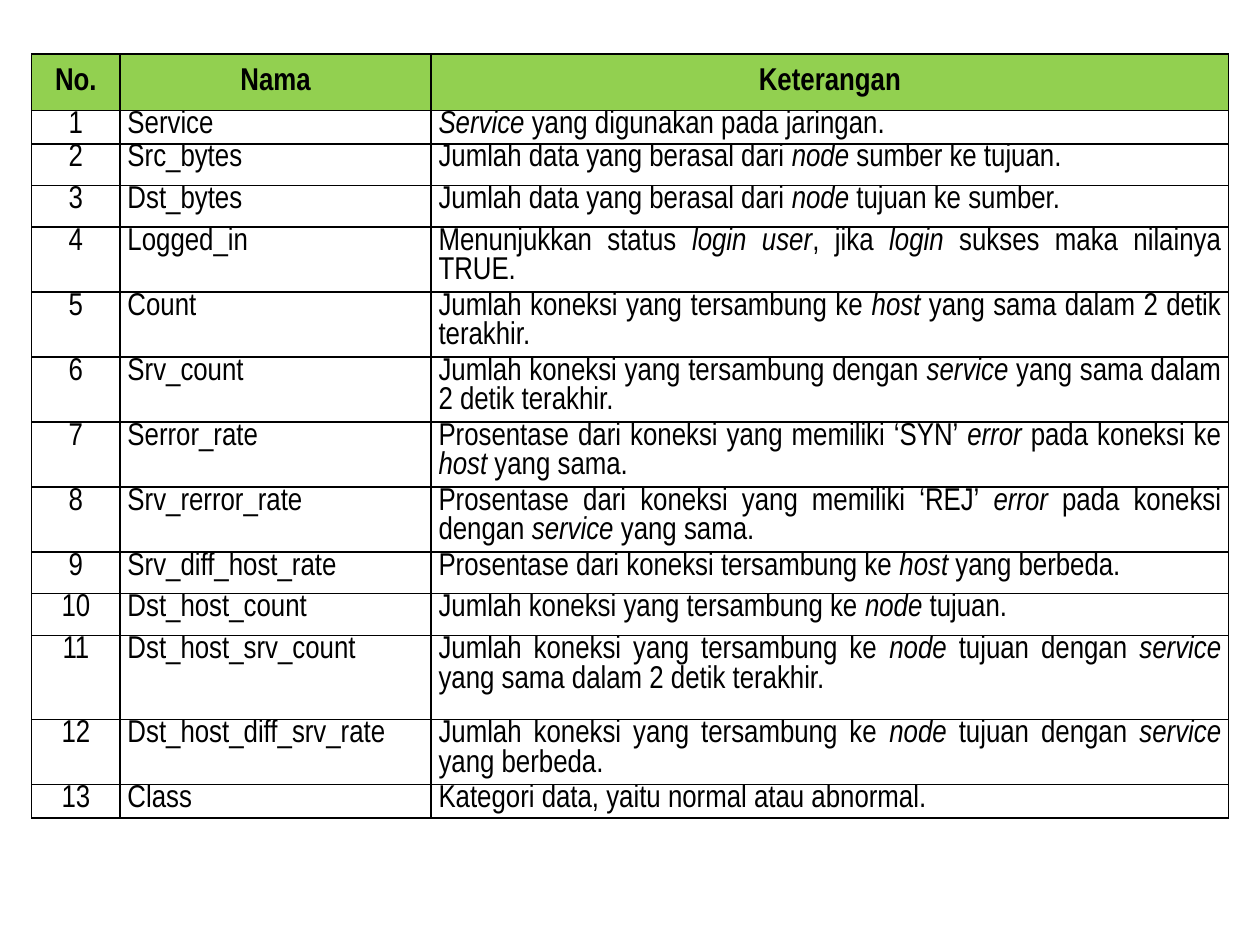
from dataclasses import dataclass
from lxml.etree import SubElement as Sub
from pptx import Presentation
from pptx.dml.color import RGBColor as Rgb
from pptx.enum.text import MSO_ANCHOR as Anchor, PP_ALIGN as Align
from pptx.oxml.ns import qn
from pptx.table import Table, _Cell as Cell
from pptx.util import Cm, Pt

HUES = {"head": "92D050", "ink": "000000"}
FACE = "Arial Narrow"
WIDTHS = (1.78, 6.27, 16.08)
HEAD = ("No.", "Nama", "Keterangan")
HEAD_H = 1.14
ALIGNS = (Align.CENTER, Align.LEFT, Align.JUSTIFY)
LOW, MID, DUO, TALL = 0.67, 0.84, 1.31, 1.7


@dataclass
class Field:
    name: str
    note: str
    high: float


FIELDS = [
    Field("Service", "*Service* yang digunakan pada jaringan.", LOW),
    Field("Src_bytes", "Jumlah data yang berasal dari *node* sumber ke tujuan.", MID),
    Field("Dst_bytes", "Jumlah data yang berasal dari *node* tujuan ke sumber.", MID),
    Field("Logged_in", "Menunjukkan status *login user*, jika *login* sukses maka nilainya TRUE.", DUO),
    Field("Count", "Jumlah koneksi yang tersambung ke *host* yang sama dalam 2 detik terakhir.", DUO),
    Field("Srv_count", "Jumlah koneksi yang tersambung dengan *service* yang sama dalam 2 detik terakhir.", DUO),
    Field("Serror_rate", "Prosentase dari koneksi yang memiliki ‘SYN’ *error* pada koneksi ke *host* yang sama.", DUO),
    Field("Srv_rerror_rate", "Prosentase dari koneksi yang memiliki ‘REJ’ *error* pada koneksi dengan *service* yang sama.", DUO),
    Field("Srv_diff_host_rate", "Prosentase dari koneksi tersambung ke *host* yang berbeda.", MID),
    Field("Dst_host_count", "Jumlah koneksi yang tersambung ke *node* tujuan.", MID),
    Field("Dst_host_srv_count", "Jumlah koneksi yang tersambung ke *node* tujuan dengan *service* yang sama dalam 2 detik terakhir.", TALL),
    Field("Dst_host_diff_srv_rate", "Jumlah koneksi yang tersambung ke *node* tujuan dengan *service* yang berbeda.", DUO),
    Field("Class", "Kategori data, yaitu normal atau abnormal.", LOW),
]


def edge(cell: Cell) -> None:
    props = cell._tc.get_or_add_tcPr()
    for side in ("a:lnL", "a:lnR", "a:lnT", "a:lnB"):
        line = Sub(props, qn(side), w=str(Pt(1)))
        fill = Sub(line, qn("a:solidFill"))
        Sub(fill, qn("a:srgbClr"), val=HUES["ink"])


def write(cell: Cell, text: str, align: Align, head: bool) -> None:
    edge(cell)
    cell.margin_left = cell.margin_right = Cm(0.15)
    cell.margin_top = cell.margin_bottom = 0
    if head:
        cell.vertical_anchor = Anchor.MIDDLE
        cell.fill.solid()
        cell.fill.fore_color.rgb = Rgb.from_string(HUES["head"])
    else:
        cell.fill.background()
    para = cell.text_frame.paragraphs[0]
    para.alignment = align
    para.line_spacing = Pt(17)
    font = para.font
    font.name, font.size, font.bold = FACE, Pt(18), head
    font.color.rgb = Rgb.from_string(HUES["ink"])
    for spot, part in enumerate(text.split("*")):
        if part:
            run = para.add_run()
            run.text = part
            if spot % 2:
                run.font.italic = True


def fill_row(table: Table, row: int, high: float, texts: tuple[str, ...], head: bool = False) -> None:
    table.rows[row].height = Cm(high)
    for col, text in enumerate(texts):
        write(table.cell(row, col), text, Align.CENTER if head else ALIGNS[col], head)


def main() -> None:
    deck = Presentation()
    deck.slide_width, deck.slide_height = Cm(25.4), Cm(19.05)
    slide = deck.slides.add_slide(deck.slide_layouts[6])
    high = HEAD_H + sum(field.high for field in FIELDS)
    frame = slide.shapes.add_table(len(FIELDS) + 1, len(HEAD), Cm(0.64), Cm(1.09), Cm(sum(WIDTHS)), Cm(high))
    table = frame.table
    table.horz_banding = False
    for col, wide in zip(table.columns, WIDTHS):
        col.width = Cm(wide)
    fill_row(table, 0, HEAD_H, HEAD, head=True)
    for row, field in enumerate(FIELDS, 1):
        fill_row(table, row, field.high, (str(row), field.name, field.note))
    deck.save("out.pptx")


if __name__ == "__main__":
    main()
